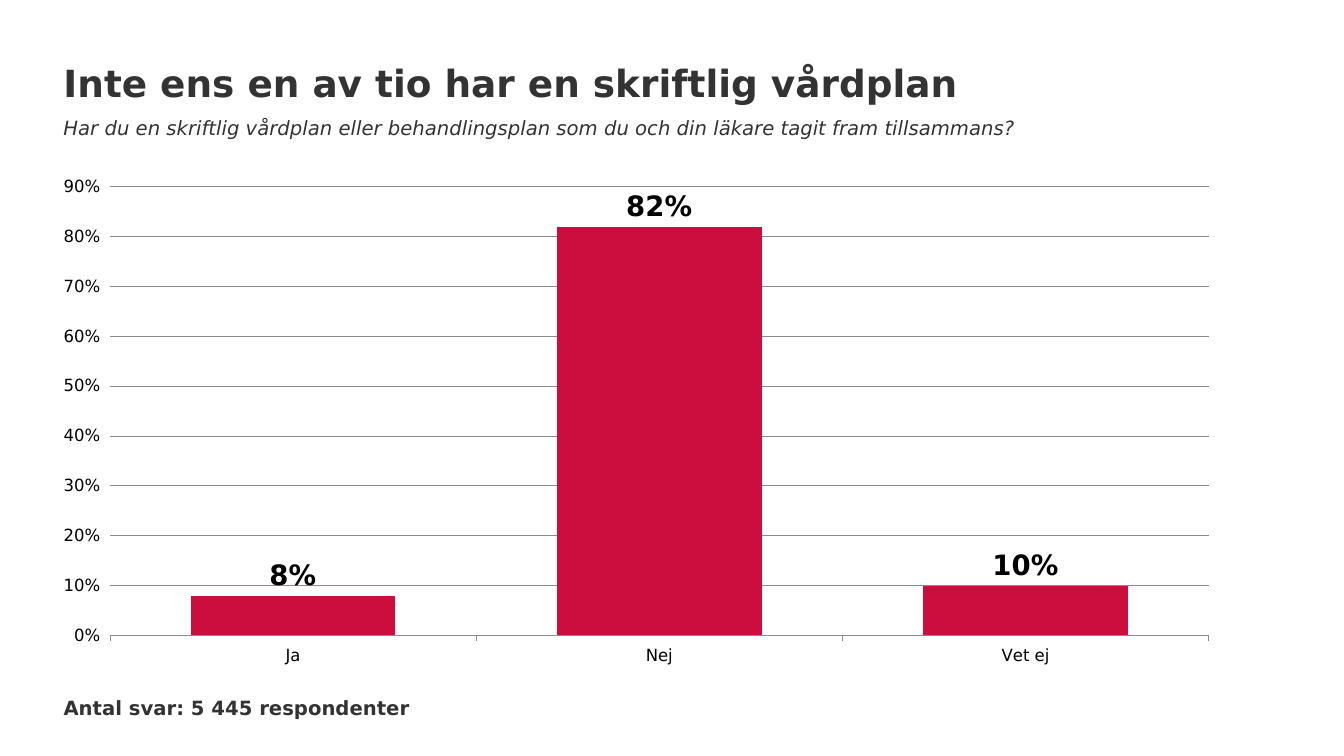
from lxml import etree
from pptx import Presentation
from pptx.chart.data import CategoryChartData
from pptx.dml.color import RGBColor
from pptx.enum.chart import (XL_AXIS_CROSSES, XL_CHART_TYPE,
                             XL_LABEL_POSITION, XL_TICK_MARK)
from pptx.enum.text import MSO_AUTO_SIZE
from pptx.util import Inches, Pt

COLUMNS = XL_CHART_TYPE.COLUMN_CLUSTERED
AT_MAXIMUM = XL_AXIS_CROSSES.MAXIMUM
ABOVE_BAR = XL_LABEL_POSITION.OUTSIDE_END
OUTWARD = XL_TICK_MARK.OUTSIDE
GROW = MSO_AUTO_SIZE.SHAPE_TO_FIT_TEXT
CHART_NS = "http://schemas.openxmlformats.org/drawingml/2006/chart"

# Content
TITLE = "Inte ens en av tio har en skriftlig vårdplan"
QUESTION = ("Har du en skriftlig vårdplan eller behandlingsplan "
            "som du och din läkare tagit fram tillsammans?")
RESPONDENTS = "Antal svar: 5 445 respondenter"
ANSWERS = {"Ja": 0.08, "Nej": 0.82, "Vet ej": 0.1}

# Style and layout
FONT = "DejaVu Sans"
COLORS = {"text": "333333", "chart": "000000", "bar": "CB0E3E", "grid": "8C8C8C"}
LEFT, WIDTH = 0.63, 12.07
CHART_TOP, CHART_HEIGHT = 1.65, 5.06
PLOT_AREA = {"x": 0.02, "y": 0.04, "w": 0.92, "h": 0.88}  # shares of the chart

prs = Presentation()
prs.slide_width, prs.slide_height = Inches(13.33), Inches(7.5)
slide = prs.slides.add_slide(prs.slide_layouts[6])


def style_font(font, size, color, bold=False, italic=False):
    font.name, font.size = FONT, Pt(size)
    font.bold, font.italic = bold, italic
    font.color.rgb = RGBColor.from_string(COLORS[color])


def style_line(line):
    line.color.rgb = RGBColor.from_string(COLORS["grid"])
    line.width = Pt(0.5)


def add_text(text, top, height, width=WIDTH, **style):
    box = slide.shapes.add_textbox(Inches(LEFT), Inches(top), Inches(width), Inches(height))
    frame = box.text_frame
    frame.word_wrap = True
    frame.auto_size = GROW
    frame.margin_left = frame.margin_right = frame.margin_top = frame.margin_bottom = 0
    run = frame.paragraphs[0].add_run()
    run.text = text
    style_font(run.font, color="text", **style)


# Answer chart
data = CategoryChartData(number_format="0%")
data.categories = list(ANSWERS)
data.add_series("Series 1", list(ANSWERS.values()))
chart = slide.shapes.add_chart(COLUMNS, Inches(LEFT), Inches(CHART_TOP),
                               Inches(WIDTH), Inches(CHART_HEIGHT), data).chart
chart.has_legend = chart.has_title = False
style_font(chart.font, 12, "chart")

# Bars and their labels
plot = chart.plots[0]
plot.gap_width = 79
plot.vary_by_categories = False
bars = plot.series[0]
bars.format.fill.solid()
bars.format.fill.fore_color.rgb = RGBColor.from_string(COLORS["bar"])
labels = bars.data_labels
labels.show_value = True
labels.position = ABOVE_BAR
labels.number_format, labels.number_format_is_linked = "0%", False
style_font(labels.font, 20, "chart", bold=True)

# Axes, with the percentages on the right
answers, shares = chart.category_axis, chart.value_axis
for axis in (answers, shares):
    axis.major_tick_mark = OUTWARD
    style_font(axis.tick_labels.font, 12, "chart")
style_line(answers.format.line)
answers.crosses = AT_MAXIMUM
shares.minimum_scale, shares.maximum_scale, shares.major_unit = 0, 0.9, 0.1
shares.tick_labels.number_format = "0%"
shares.tick_labels.number_format_is_linked = False
shares.format.line.fill.background()
shares.has_major_gridlines = True
style_line(shares.major_gridlines.format.line)

# Fixed plot area
plot_area = chart._chartSpace.find(f".//{{{CHART_NS}}}plotArea")
for old_layout in plot_area.findall(f"{{{CHART_NS}}}layout"):
    plot_area.remove(old_layout)
layout = etree.Element(f"{{{CHART_NS}}}layout")
manual = etree.SubElement(layout, f"{{{CHART_NS}}}manualLayout")
settings = {"layoutTarget": "inner", "xMode": "edge", "yMode": "edge", **PLOT_AREA}
for tag, value in settings.items():
    etree.SubElement(manual, f"{{{CHART_NS}}}{tag}", val=str(value))
plot_area.insert(0, layout)

# Texts
add_text(RESPONDENTS, 6.9, 0.24, width=3.92, size=14, bold=True)
add_text(QUESTION, 1.15, 0.47, size=14, italic=True)
add_text(TITLE, 0.6, 0.45, size=26.7, bold=True)

prs.save("out.pptx")
